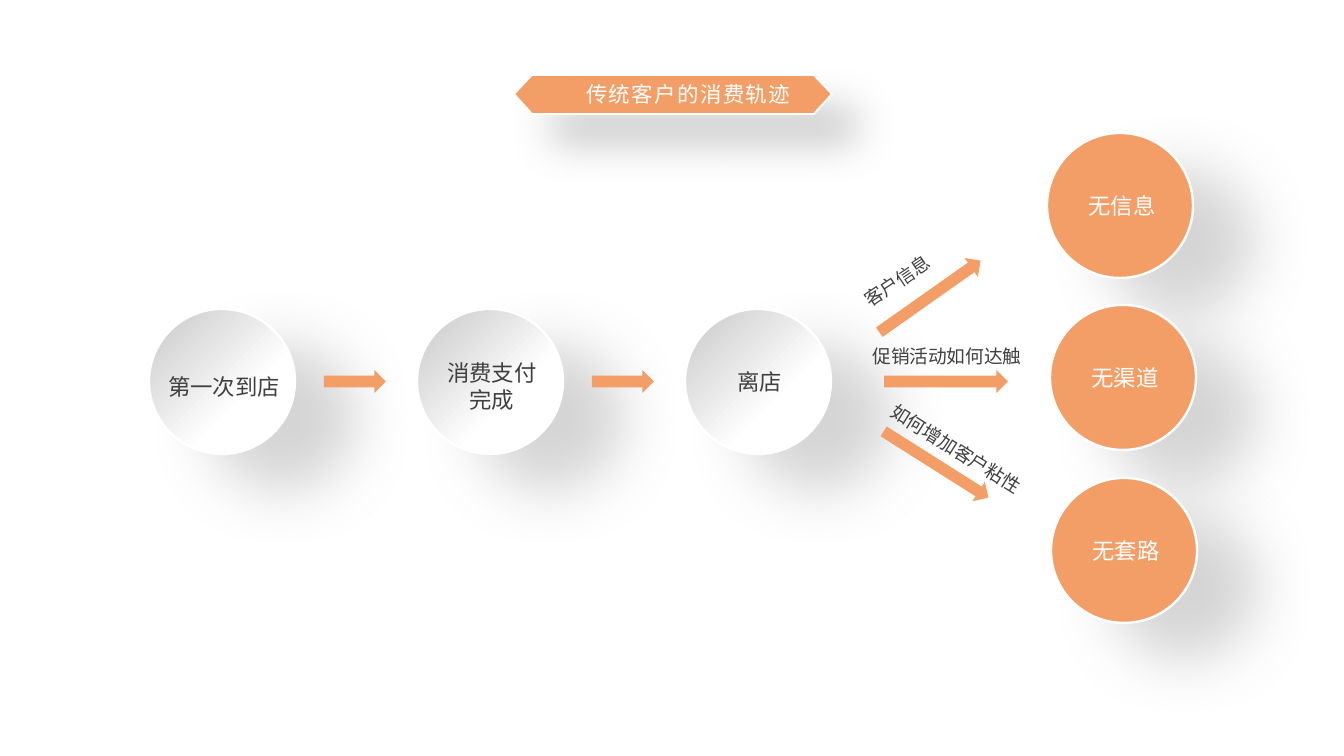
"""Build a slide that follows a traditional customer's path through a shop."""
from lxml.etree import SubElement
from pptx import Presentation
from pptx.dml.color import RGBColor
from pptx.enum.shapes import MSO_SHAPE
from pptx.enum.text import MSO_ANCHOR, PP_ALIGN
from pptx.oxml.ns import qn
from pptx.util import Emu, Pt

COLORS = {"orange": "F39E66", "white": "FFFFFF", "silver": "C7C7C7",
          "ink": "404040", "shadow": "808080"}
LATIN, CHINESE = "Karla", "Noto Sans CJK SC"
SLIDE_SIZE = (1344, 756)
CIRCLE = (146, 145)
CAPTION = (144, 86)
ARROW_HEIGHT = 23
SILVER_STOPS = [(0, "white"), (36, "white"), (100, "silver")]
CIRCLE_SHADOW = {"alpha": 32, "blur": 32, "distance": 37, "angle": 31}
BANNER_SHADOW = {"alpha": 38, "blur": 22, "distance": 23, "angle": 45}

TITLE = "传统客户的消费轨迹"
BANNER_POINTS = [(514, 94), (532, 75), (814, 75), (832, 94), (814, 114), (532, 114)]
STEP_LEFT, STEP_TOP, STEP_PITCH = 149, 309, 268
STEPS = [(["第一次到店"], 35), (["消费支付", "完成"], 34), (["离店"], 30)]
STEP_ARROW = (175, 61, 62)
PROBLEMS = [("无信息", 1047, 133), ("无渠道", 1050, 305), ("无套路", 1051, 478)]
FAN_ARROWS = [(868, 285, 324.8), (884, 370, 0), (874, 453, 32.3)]
FAN_WIDTH = 124
FAN_LABELS = [("客户信息", 825, 238, 144, 326.1),
              ("促销活动如何达触", 840, 313, 214, 0),
              ("如何增加客户粘性", 849, 406, 214, 32.2)]


def px(value):
    return Emu(round(value * 914400 / 134.4))


def color(name):
    return RGBColor.from_string(COLORS[name])


def add_shadow(shape, alpha, blur, distance, angle):
    effects = shape._element.spPr.find(qn("a:effectLst"))
    outer = SubElement(effects, qn("a:outerShdw"), blurRad=str(Pt(blur)),
                       dist=str(Pt(distance)), dir=str(angle * 60000),
                       algn="tl", rotWithShape="0")
    tint = SubElement(outer, qn("a:srgbClr"), val=COLORS["shadow"])
    SubElement(tint, qn("a:alpha"), val=str(alpha * 1000))


def fill_silver(shape):
    shape.fill.gradient()
    shape.fill.gradient_angle = 135
    stops = shape._element.spPr.find(qn("a:gradFill")).find(qn("a:gsLst"))
    for stop in list(stops):
        stops.remove(stop)
    for position, name in SILVER_STOPS:
        stop = SubElement(stops, qn("a:gs"), pos=str(position * 1000))
        SubElement(stop, qn("a:srgbClr"), val=COLORS[name])


def style(shape, line_width=0):
    shape.shadow.inherit = False
    shape.fill.solid()
    shape.fill.fore_color.rgb = color("orange")
    if line_width:
        shape.line.color.rgb = color("white")
        shape.line.width = Pt(line_width)
    else:
        shape.line.fill.background()


def add_run(paragraph, text, size, ink, latin=LATIN):
    run = paragraph.add_run()
    run.text = text
    run.font.size = Pt(size)
    run.font.name = latin
    run.font.color.rgb = color(ink)
    SubElement(run._r.get_or_add_rPr(), qn("a:ea"), typeface=CHINESE)
    return run


def add_caption(shapes, lines, left, top, width, size, ink, rotation=0):
    box = shapes.add_textbox(px(left), px(top), px(width), px(CAPTION[1]))
    box.rotation = rotation
    frame = box.text_frame
    frame.word_wrap = True
    frame.vertical_anchor = MSO_ANCHOR.MIDDLE
    frame.margin_left = frame.margin_right = px(9)
    frame.margin_top = frame.margin_bottom = px(5)
    for index, line in enumerate(lines):
        paragraph = frame.add_paragraph() if index else frame.paragraphs[0]
        paragraph.alignment = PP_ALIGN.CENTER
        add_run(paragraph, line, size, ink)


def add_circle(slide, lines, left, top, caption_drop, ink, silver=False):
    shapes = slide.shapes.add_group_shape().shapes
    circle = shapes.add_shape(MSO_SHAPE.OVAL, px(left), px(top), *map(px, CIRCLE))
    style(circle, 1.25)
    if silver:
        fill_silver(circle)
    add_shadow(circle, **CIRCLE_SHADOW)
    add_caption(shapes, lines, left + 3, top + caption_drop, CAPTION[0], 12, ink)


def add_arrow(slide, left, top, width, rotation=0):
    arrow = slide.shapes.add_shape(MSO_SHAPE.RIGHT_ARROW, px(left), px(top),
                                   px(width), px(ARROW_HEIGHT))
    arrow.rotation = rotation
    style(arrow)


def add_banner(slide):
    points = [(px(x), px(y)) for x, y in BANNER_POINTS]
    builder = slide.shapes.build_freeform(*points[0])
    builder.add_line_segments(points[1:], close=True)
    banner = builder.convert_to_shape()
    style(banner, 1)
    add_shadow(banner, **BANNER_SHADOW)
    box = slide.shapes.add_textbox(px(573), px(74), px(238), px(39))
    box.text_frame.word_wrap = True
    run = add_run(box.text_frame.paragraphs[0], TITLE, 11.5, "white", CHINESE)
    run._r.get_or_add_rPr().set("spc", "70")


def main():
    presentation = Presentation()
    presentation.slide_width, presentation.slide_height = map(px, SLIDE_SIZE)
    slide = presentation.slides.add_slide(presentation.slide_layouts[6])
    add_banner(slide)
    for index, (lines, drop) in enumerate(STEPS):
        left = STEP_LEFT + index * STEP_PITCH
        add_circle(slide, lines, left, STEP_TOP, drop, "ink", silver=True)
        if index < len(STEPS) - 1:
            across, down, width = STEP_ARROW
            add_arrow(slide, left + across, STEP_TOP + down, width)
    for left, top, rotation in FAN_ARROWS:
        add_arrow(slide, left, top, FAN_WIDTH, rotation)
    for text, left, top in PROBLEMS:
        add_circle(slide, [text], left, top, 30, "white")
    for text, left, top, width, rotation in FAN_LABELS:
        add_caption(slide.shapes, [text], left, top, width, 10, "ink", rotation)
    presentation.save("out.pptx")


if __name__ == "__main__":
    main()
